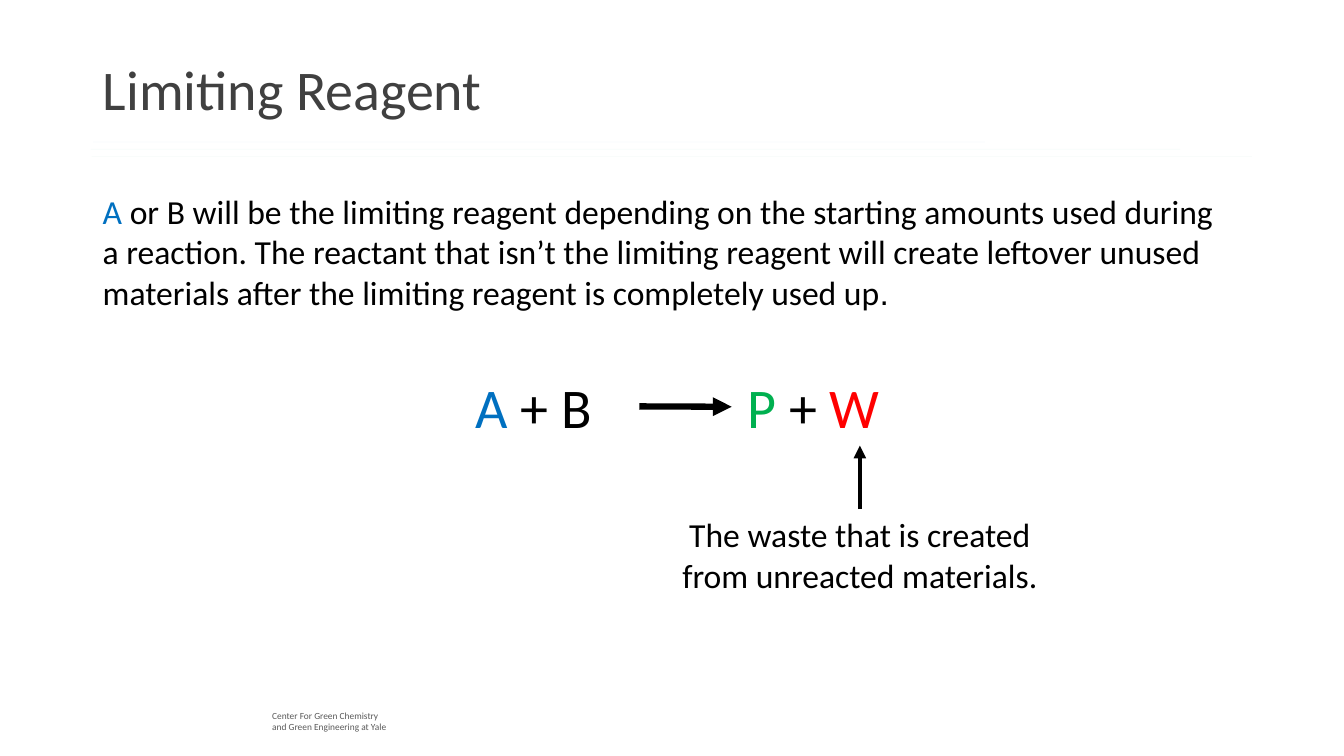
from pptx import Presentation
from pptx.dml.color import RGBColor
from pptx.enum.shapes import MSO_CONNECTOR
from pptx.enum.text import MSO_ANCHOR, MSO_AUTO_SIZE, PP_ALIGN
from pptx.oxml.ns import qn
from pptx.util import Cm, Pt
from lxml.etree import SubElement

BLACK = RGBColor(0x00, 0x00, 0x00)
BLUE = RGBColor(0x00, 0x70, 0xC0)
GREEN = RGBColor(0x00, 0xB0, 0x50)
RED = RGBColor(0xFF, 0x00, 0x00)
TITLE_GRAY = RGBColor(0x40, 0x40, 0x40)
FOOTER_GRAY = RGBColor(0x59, 0x59, 0x59)
RULE_CYAN = RGBColor(0x4E, 0xB3, 0xCF)
RULE_TEAL = RGBColor(0x44, 0xC1, 0xA3)
RULE_GREEN = RGBColor(0x37, 0xA7, 0x6F)


def write(holder, paragraphs, size, align=PP_ALIGN.LEFT, wrap=True):
    frame = holder.text_frame
    frame.word_wrap = wrap
    for index, pieces in enumerate(paragraphs):
        paragraph = frame.add_paragraph() if index else frame.paragraphs[0]
        paragraph.alignment = align
        for text, color in pieces:
            run = paragraph.add_run()
            run.text = text
            run.font.name = "Calibri"
            run.font.size = Pt(size)
            run.font.color.rgb = color
    return frame


def add_line(start, end, width, color):
    line = slide.shapes.add_connector(
        MSO_CONNECTOR.STRAIGHT, *map(Cm, start), *map(Cm, end))
    line.line.color.rgb = color
    line.line.width = Pt(width)
    SubElement(line._element.spPr, qn("a:effectLst"))
    return line


prs = Presentation()
prs.slide_width, prs.slide_height = Cm(33.87), Cm(19.05)
slide = prs.slides.add_slide(prs.slide_layouts[5])

center_name = slide.shapes.add_textbox(Cm(6.61), Cm(17.76), Cm(4.72), Cm(0.84))
write(center_name, [[("Center For Green Chemistry", FOOTER_GRAY)],
                    [("and Green Engineering at Yale", FOOTER_GRAY)]], 6.7)

for left, right, y, color in ((2.34, 24.82, 3.58, RULE_CYAN),
                              (2.29, 29.74, 3.76, RULE_TEAL),
                              (2.31, 31.55, 3.94, RULE_GREEN)):
    title_rule = add_line((left, y), (right, y), 0.5, color)
    rule_color = title_rule._element.spPr.find(".//" + qn("a:srgbClr"))
    SubElement(rule_color, qn("a:alpha"), val="3000")

title = slide.shapes.title
title.left, title.top, title.width, title.height = map(Cm, (2.34, 0.48, 29.21, 3.68))
title_frame = write(title, [[("Limiting Reagent", TITLE_GRAY)]], 40)
title_frame.vertical_anchor = MSO_ANCHOR.MIDDLE
title_frame.auto_size = MSO_AUTO_SIZE.NONE
title_frame.paragraphs[0].line_spacing = 0.9

explanation = slide.shapes.add_textbox(Cm(2.34), Cm(4.69), Cm(28.65), Cm(3.33))
explanation_frame = write(explanation, [[
    ("A", BLUE),
    (" or B will be the limiting reagent depending on the starting amounts used "
     "during a reaction. The reactant that isn’t the limiting reagent will create "
     "leftover unused materials after the limiting reagent is completely used up", BLACK),
    (".", BLACK)]], 24)
explanation_frame.paragraphs[0].runs[-1].font.name = "Arial"

reactants = slide.shapes.add_textbox(Cm(11.74), Cm(9.25), Cm(3.53), Cm(1.96))
write(reactants, [[("A", BLUE), (" + B", BLACK)]], 40, wrap=False)

products = slide.shapes.add_textbox(Cm(18.59), Cm(9.25), Cm(3.91), Cm(1.96))
write(products, [[("P", GREEN), (" + ", BLACK), ("W", RED)]], 40, wrap=False)

waste_note = slide.shapes.add_textbox(Cm(16.8), Cm(12.83), Cm(9.74), Cm(2.31))
write(waste_note, [[("The waste that is created", BLACK)],
                   [("from unreacted materials.", BLACK)]],
      24, PP_ALIGN.CENTER, wrap=False)

reaction_arrow = add_line((16.11, 10.24), (18.44, 10.25), 4.5, BLACK)
waste_arrow = add_line((21.67, 12.83), (21.67, 11.23), 3, BLACK)
waste_arrow.begin_connect(waste_note, 0)
for arrow in (reaction_arrow, waste_arrow):
    SubElement(arrow.line._get_or_add_ln(), qn("a:tailEnd"), type="triangle")

prs.save("out.pptx")
